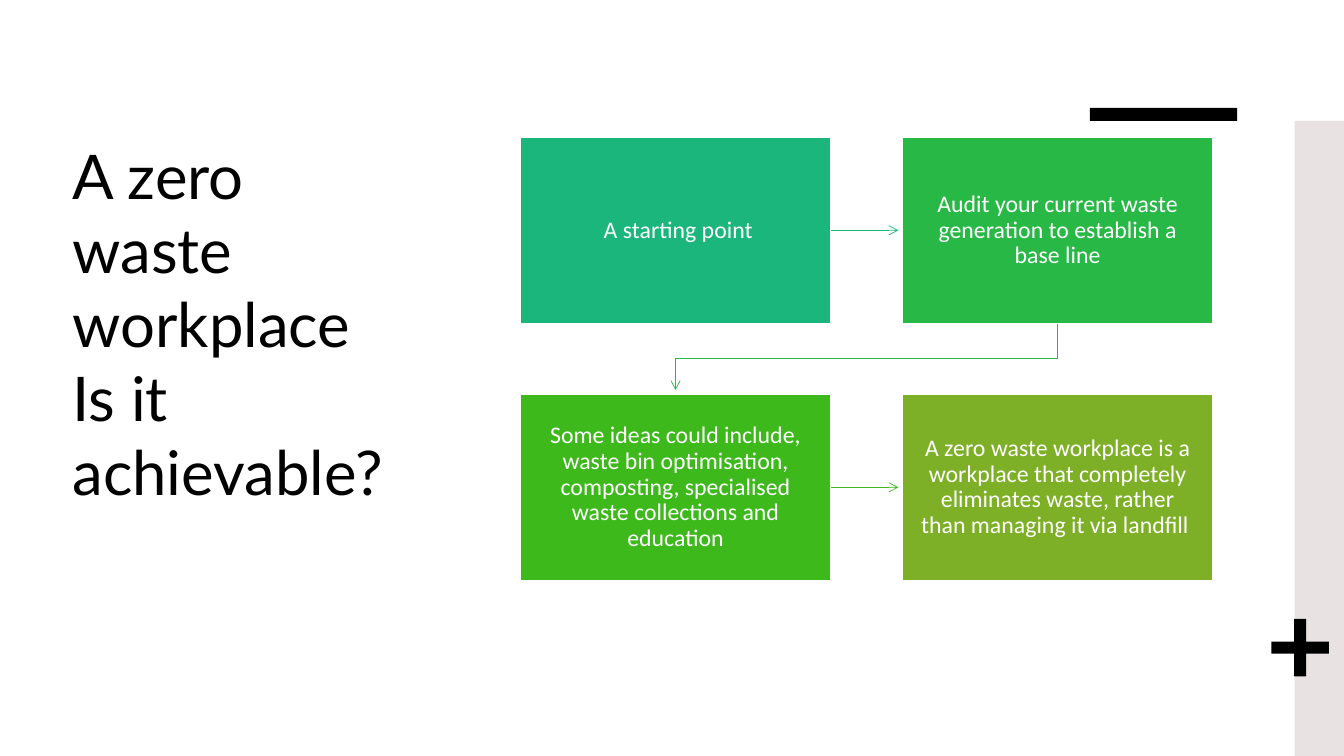
from lxml import etree
from pptx import Presentation
from pptx.dml.color import RGBColor
from pptx.enum import shapes, text
from pptx.oxml.ns import qn
from pptx.util import Inches, Pt

COLOURS = {
    "ink": "000000",
    "paper": "FFFFFF",
    "side": "E8E2E2",
    "teal": "1BB67B",
    "green": "28B845",
    "leaf": "3EB91C",
    "olive": "7DB026",
}

# Grid of the four step tiles, in inches
LEFT, TOP = 5.16, 1.36
TILE_WIDTH, TILE_HEIGHT = 3.08, 1.85
COLUMN_STEP, ROW_STEP = 3.79, 2.55
ARROW_GAP = 0.04

STEPS = [
    ("teal", " A starting point"),
    ("green", "Audit your current waste generation to establish a base line"),
    ("leaf", "Some ideas could include, waste bin optimisation, composting, "
             "specialised waste collections and education"),
    ("olive", "A zero waste workplace is a workplace that completely "
              "eliminates waste, rather than managing it via landfill "),
]


def colour(name):
    return RGBColor.from_string(COLOURS[name])


def style_text(frame, font, size, ink):
    for para in frame.paragraphs:
        for span in para.runs:
            span.font.name = font
            span.font.size = Pt(size)
            span.font.color.rgb = colour(ink)


def add_block(page, kind, left, top, width, height, fill):
    block = page.shapes.add_shape(
        kind, Inches(left), Inches(top), Inches(width), Inches(height))
    block.shadow.inherit = False
    block.fill.solid()
    block.fill.fore_color.rgb = colour(fill)
    block.line.fill.background()
    return block


def add_title(page, words):
    box = page.shapes.add_textbox(
        Inches(0.62), Inches(1.32), Inches(3.5), Inches(4.4))
    frame = box.text_frame
    frame.word_wrap = True
    frame.vertical_anchor = text.MSO_ANCHOR.TOP
    frame.text = words
    style_text(frame, "Lato", 44, "ink")


def add_tile(page, index, fill, words):
    row, column = divmod(index, 2)
    tile = add_block(page, shapes.MSO_SHAPE.RECTANGLE,
                     LEFT + column * COLUMN_STEP, TOP + row * ROW_STEP,
                     TILE_WIDTH, TILE_HEIGHT, fill)
    tile.line.color.rgb = colour("paper")
    tile.line.width = Pt(1)
    frame = tile.text_frame
    frame.word_wrap = True
    frame.vertical_anchor = text.MSO_ANCHOR.MIDDLE
    frame.margin_left = frame.margin_right = Inches(0.15)
    frame.margin_top = frame.margin_bottom = Inches(0.16)
    frame.text = words
    para = frame.paragraphs[0]
    para.alignment = text.PP_ALIGN.CENTER
    para.line_spacing = 0.9
    style_text(frame, "Calibri", 17, "paper")
    return tile


def style_arrow(arrow, ink):
    arrow.line.color.rgb = colour(ink)
    arrow.line.width = Pt(0.5)
    etree.SubElement(arrow.line._get_or_add_ln(), qn("a:tailEnd"), type="arrow")


def add_row_arrow(page, start, end, ink):
    """Arrow from a tile's right side to just short of the next tile."""
    middle = start.top + start.height // 2
    arrow = page.shapes.add_connector(
        shapes.MSO_CONNECTOR.STRAIGHT, start.left + start.width, middle,
        end.left - Inches(ARROW_GAP), middle)
    arrow.begin_connect(start, 3)
    style_arrow(arrow, ink)
    etree.SubElement(arrow._element.spPr, qn("a:effectLst"))


def add_turn_arrow(page, start, end, ink):
    """Bent arrow from a tile's bottom down to a tile in the next row."""
    start_x = start.left + start.width // 2
    end_x = end.left + end.width // 2
    bottom = start.top + start.height
    bend = (bottom + end.top) // 2
    builder = page.shapes.build_freeform(start_x, bottom)
    builder.add_line_segments(
        [(start_x, bend), (end_x, bend), (end_x, end.top - Inches(ARROW_GAP))],
        close=False)
    arrow = builder.convert_to_shape()
    arrow.shadow.inherit = False
    arrow.fill.background()
    style_arrow(arrow, ink)


def main():
    deck = Presentation()
    deck.slide_width, deck.slide_height = Inches(13.33), Inches(7.5)
    page = deck.slides.add_slide(deck.slide_layouts[6])

    add_title(page, "A zero waste workplace\vIs it achievable?")
    rectangle = shapes.MSO_SHAPE.RECTANGLE
    add_block(page, rectangle, 12.84, 1.2, 0.49, 6.3, "side")
    add_block(page, rectangle, 10.81, 1.07, 1.46, 0.13, "ink")
    plus = add_block(page, shapes.MSO_SHAPE.CROSS, 12.61, 6.14, 0.57, 0.57, "ink")
    plus.adjustments[0] = 0.395

    audit_start, audit, ideas, goal = [
        add_tile(page, index, fill, words)
        for index, (fill, words) in enumerate(STEPS)]
    add_row_arrow(page, audit_start, audit, "teal")
    add_turn_arrow(page, audit, ideas, "green")
    add_row_arrow(page, ideas, goal, "leaf")

    deck.save("out.pptx")


if __name__ == "__main__":
    main()
